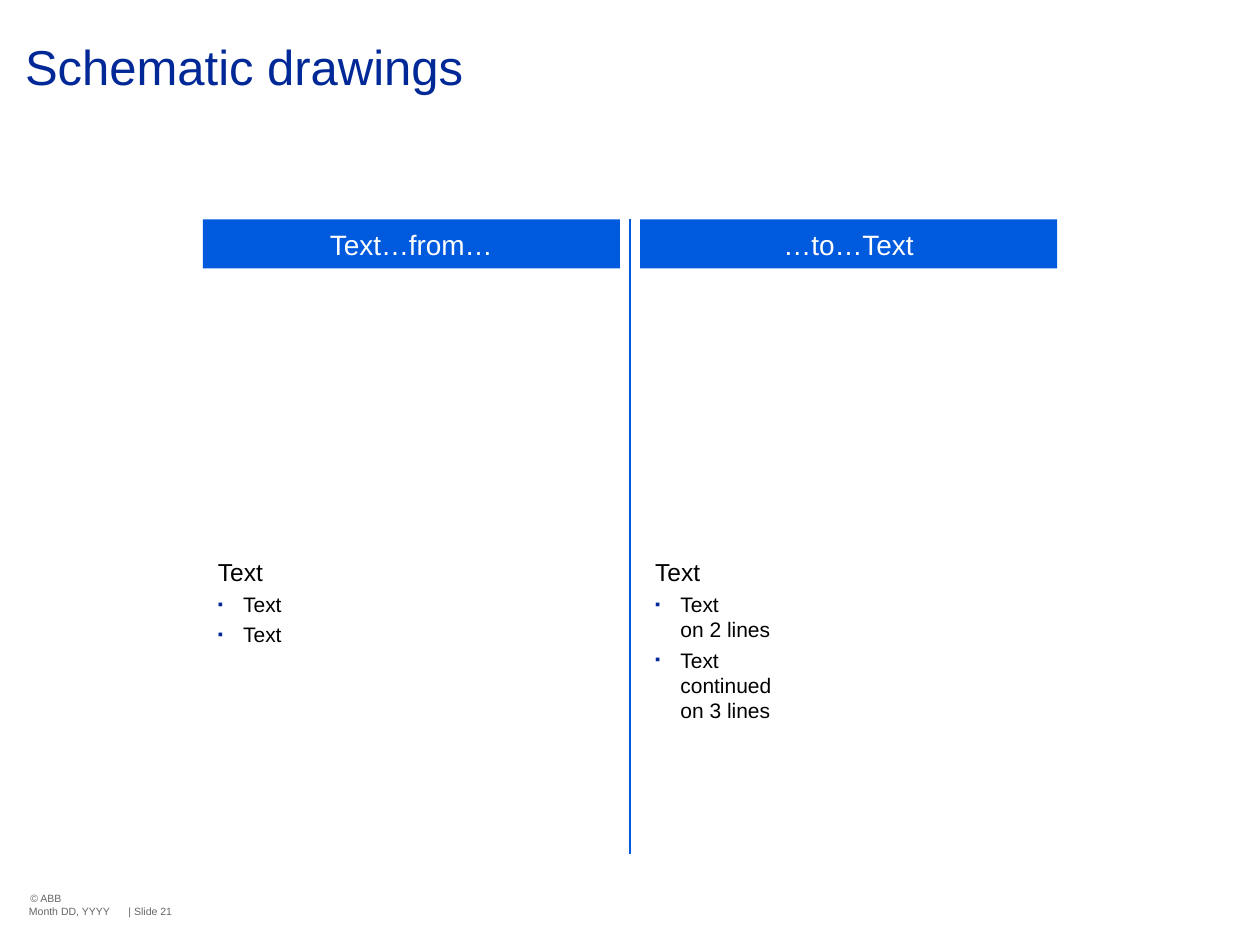
from copy import deepcopy
from dataclasses import dataclass

from lxml.etree import SubElement
from pptx import Presentation
from pptx.dml.color import RGBColor
from pptx.enum.shapes import MSO_CONNECTOR, MSO_SHAPE
from pptx.enum.text import MSO_ANCHOR, PP_ALIGN
from pptx.oxml.ns import qn
from pptx.util import Inches, Pt


@dataclass(frozen=True)
class Theme:
    """Colours, font and type sizes of the slide."""

    font: str = "Arial"
    navy: str = "002897"
    blue: str = "005ADE"
    black: str = "000000"
    white: str = "FFFFFF"
    grey: str = "666666"
    title: int = 28
    header: int = 16
    lead: int = 14
    item: int = 12
    footer: int = 6


THEME = Theme()
PADDING = (0.12, 0.08, 0.12, 0.08)


def add_bullet(paragraph, color):
    """Give a paragraph a small square bullet with a hanging indent."""
    properties = paragraph._p.get_or_add_pPr()
    properties.set("marL", str(Inches(0.2)))
    properties.set("indent", str(Inches(-0.2)))
    bullet_color = SubElement(properties, qn("a:buClr"))
    SubElement(bullet_color, qn("a:srgbClr"), val=color)
    SubElement(properties, qn("a:buSzPct"), val="70000")
    SubElement(properties, qn("a:buFont"), typeface=THEME.font)
    SubElement(properties, qn("a:buChar"), char="▪")


def write(paragraph, text, size, color, align=PP_ALIGN.LEFT, before=None, spacing=None, bullet=None):
    """Fill a paragraph with formatted text, breaking at each newline."""
    if bullet:
        add_bullet(paragraph, bullet)
    paragraph.alignment = align
    if before is not None:
        paragraph.space_before = Pt(before)
    if spacing is not None:
        paragraph.line_spacing = spacing
    paragraph.text = text.replace("\n", "\v")
    for run in paragraph.runs:
        run.font.name = THEME.font
        run.font.size = Pt(size)
        run.font.color.rgb = RGBColor.from_string(color)
    for line_break in paragraph._p.findall(qn("a:br")):
        line_break.append(deepcopy(paragraph.runs[0].font._element))


class SlideBuilder:
    """Draws styled elements on the current slide."""

    def __init__(self, slide, theme):
        """Keep the slide and its theme."""
        self.slide = slide
        self.theme = theme

    def frame(self, shape, insets, anchor):
        """Set up the text frame of a shape and return it."""
        frame = shape.text_frame
        frame.word_wrap = True
        frame.vertical_anchor = anchor
        frame.margin_left, frame.margin_top, frame.margin_right, frame.margin_bottom = map(Inches, insets)
        return frame

    def text_box(self, box, insets=(0, 0, 0, 0), anchor=MSO_ANCHOR.TOP):
        """Add an empty text box and return its frame."""
        shape = self.slide.shapes.add_textbox(*map(Inches, box))
        return self.frame(shape, insets, anchor)

    def title(self, text):
        """Add the slide title."""
        frame = self.text_box((0, 0, 10, 1.74), (0.2, 0.34, 0.24, 0))
        write(frame.paragraphs[0], text, self.theme.title, self.theme.navy, spacing=0.9)

    def footer(self, text, box, anchor=MSO_ANCHOR.TOP):
        """Add a small footer text."""
        frame = self.text_box(box, anchor=anchor)
        write(frame.paragraphs[0], text, self.theme.footer, self.theme.grey)

    def header(self, text, box):
        """Add a filled column header."""
        shape = self.slide.shapes.add_shape(MSO_SHAPE.RECTANGLE, *map(Inches, box))
        shape.shadow.inherit = False
        shape.fill.solid()
        shape.fill.fore_color.rgb = RGBColor.from_string(self.theme.blue)
        shape.line.fill.background()
        frame = self.frame(shape, PADDING, MSO_ANCHOR.MIDDLE)
        write(frame.paragraphs[0], text, self.theme.header, self.theme.white, align=PP_ALIGN.CENTER)

    def body(self, lead, items, box):
        """Add a lead line with bulleted items below it."""
        theme = self.theme
        frame = self.text_box(box, PADDING)
        write(frame.paragraphs[0], lead, theme.lead, theme.black)
        for item in items:
            write(frame.add_paragraph(), item, theme.item, theme.black, before=3, bullet=theme.navy)

    def divider(self, x, top, bottom):
        """Add a vertical line."""
        ends = map(Inches, (x, top, x, bottom))
        connector = self.slide.shapes.add_connector(MSO_CONNECTOR.STRAIGHT, *ends)
        connector.line.color.rgb = RGBColor.from_string(self.theme.blue)
        connector.line.width = Pt(1)
        SubElement(connector._element.spPr, qn("a:effectLst"))


def main():
    """Build and save the slide."""
    presentation = Presentation()
    presentation.slide_width, presentation.slide_height = Inches(10), Inches(7.5)
    slide = presentation.slides.add_slide(presentation.slide_layouts[6])
    builder = SlideBuilder(slide, THEME)

    builder.footer("© ABB", (0.24, 7.08, 1.22, 0.1))
    builder.footer("| Slide 21", (1.02, 7.18, 0.53, 0.1), MSO_ANCHOR.MIDDLE)
    builder.title("Schematic drawings")
    builder.footer("Month DD, YYYY", (0.23, 7.18, 0.8, 0.11))

    top, bottom, center, width, gap = 1.74, 6.78, 5, 3.31, 0.08
    body_top = 4.34
    columns = (
        (center - gap - width, "Text…from…", ("Text", "Text")),
        (center + gap, "…to…Text", ("Text\non 2 lines", "Text\ncontinued\non 3 lines")),
    )
    builder.divider(center, top, bottom)
    for left, heading, items in columns:
        builder.header(heading, (left, top, width, 0.39))
        builder.body("Text", items, (left, body_top, width, bottom - body_top))

    presentation.save("out.pptx")


if __name__ == "__main__":
    main()
